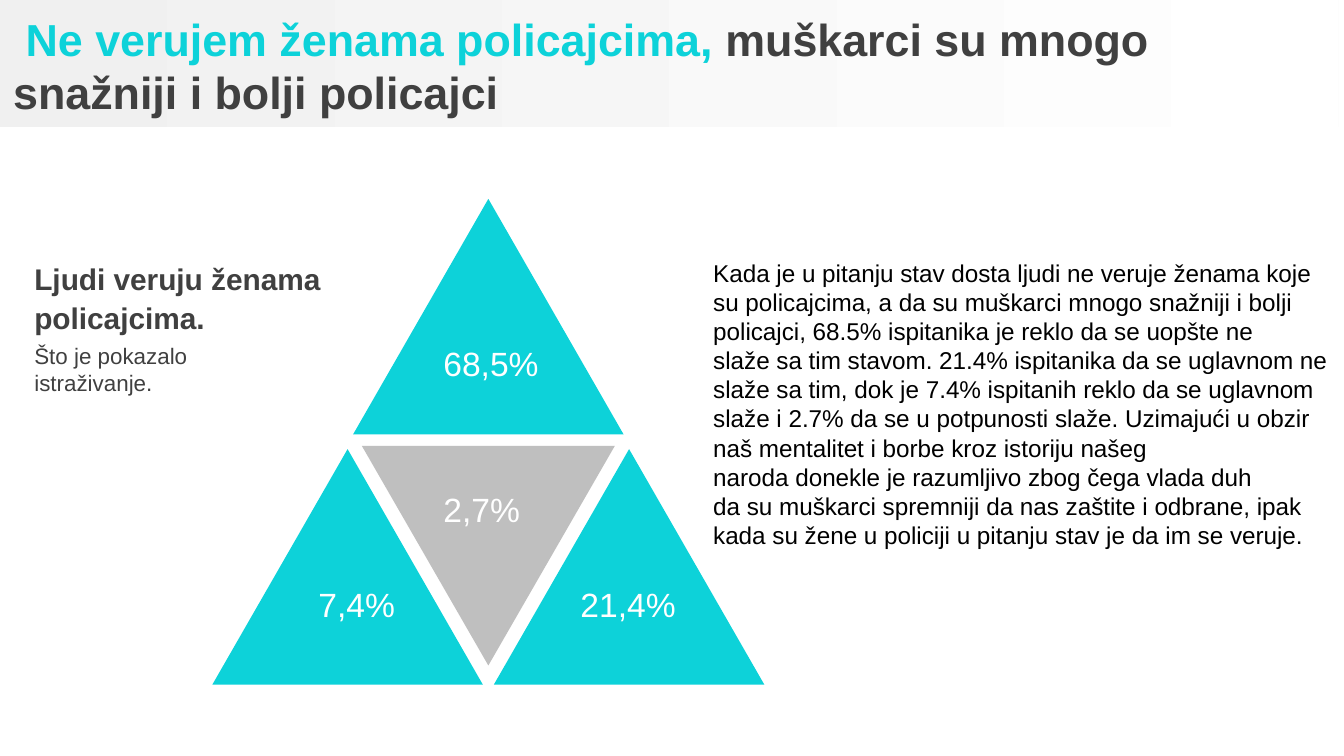
import pptx
import pptx.dml.color
import pptx.enum.shapes
import pptx.enum.text
import pptx.util

SHAPE = pptx.enum.shapes.MSO_SHAPE
ANCHOR = pptx.enum.text.MSO_ANCHOR
TURQUOISE, DARK, GRAY, BLACK, WHITE = "0DD2D9", "404040", "BFBFBF", "000000", "FFFFFF"
BODY = [
    "Kada je u pitanju stav dosta ljudi ne veruje ženama koje su policajcima, "
    "a da su muškarci mnogo snažniji i bolji",
    "policajci, 68.5% ispitanika je reklo da se uopšte ne",
    "slaže sa tim stavom. 21.4% ispitanika da se uglavnom ne slaže sa tim, "
    "dok je 7.4% ispitanih reklo da se uglavnom slaže i 2.7% da se u potpunosti "
    "slaže. Uzimajući u obzir naš mentalitet i borbe kroz istoriju našeg",
    "naroda donekle je razumljivo zbog čega vlada duh",
    "da su muškarci spremniji da nas zaštite i odbrane, ipak",
    "kada su žene u policiji u pitanju stav je da im se veruje.",
]


def color(hex_string):
    return pptx.dml.color.RGBColor.from_string(hex_string)


def add_run(paragraph, text, size=18, fill=WHITE, bold=False):
    run = paragraph.add_run()
    run.text = text
    run.font.name = "Arial"
    run.font.size = pptx.util.Pt(size)
    run.font.bold = bold
    run.font.color.rgb = color(fill)


class Deck:
    """Holds the presentation, the current slide and its element styles."""

    def __init__(self, width, height):
        self.presentation = pptx.Presentation()
        self.presentation.slide_width = pptx.util.Cm(width)
        self.presentation.slide_height = pptx.util.Cm(height)
        self.slide = self.presentation.slides.add_slide(self.presentation.slide_layouts[6])

    def shape(self, kind, *box):
        shape = self.slide.shapes.add_shape(kind, *map(pptx.util.Cm, box))
        shape.shadow.inherit = False
        shape.line.fill.background()
        return shape

    def band(self, start, end, *box):
        """Draw a rectangle with a left-to-right gradient."""
        fill = self.shape(SHAPE.RECTANGLE, *box).fill
        fill.gradient()
        fill.gradient_angle = 0
        for stop, position, stop_color in zip(fill.gradient_stops, (0, 1), (start, end)):
            stop.position = position
            stop.color.rgb = color(stop_color)

    def triangle(self, kind, fill, *box):
        shape = self.shape(kind, *box)
        shape.fill.solid()
        shape.fill.fore_color.rgb = color(fill)

    def text(self, paragraphs, *box, anchor=ANCHOR.TOP, spacing=None, **style):
        """Add a text box; each paragraph is a string or a list of (text, colour)."""
        frame = self.slide.shapes.add_textbox(*map(pptx.util.Cm, box)).text_frame
        frame.word_wrap = True
        frame.vertical_anchor = anchor
        for index, content in enumerate(paragraphs):
            paragraph = frame.add_paragraph() if index else frame.paragraphs[0]
            paragraph.line_spacing = spacing
            if isinstance(content, str):
                add_run(paragraph, content, **style)
            else:
                for text, fill in content:
                    add_run(paragraph, text, fill=fill, **style)


def main():
    deck = Deck(25.4, 14.29)
    deck.band("F0F0F0", WHITE, 0, 0, 25.3, 2.4)
    title = [(" Ne verujem ženama policajcima, ", TURQUOISE),
             ("muškarci su mnogo snažniji i bolji policajci", DARK)]
    deck.text([title], 0, 0.08, 23.62, 2.3, anchor=ANCHOR.MIDDLE, size=24, bold=True)

    width, height, center = 5.11, 4.45, 9.23
    half_step = 2.66
    for offset, top in ((0, 3.76), (-half_step, 8.49), (half_step, 8.49)):
        deck.triangle(SHAPE.FLOWCHART_EXTRACT, TURQUOISE,
                      center + offset - width / 2, top, width, height)
    deck.triangle(SHAPE.FLOWCHART_MERGE, GRAY, center - 2.39, 8.43, 4.78, 4.15)

    deck.text(["Ljudi veruju ženama policajcima."], 0.4, 4.57, 6.38, 2.06,
              anchor=ANCHOR.MIDDLE, spacing=1.1, size=16, fill=DARK, bold=True)
    deck.text(["Što je pokazalo istraživanje."], 0.4, 6.35, 4.93, 1.27, size=12, fill=DARK)
    deck.text(BODY, 13.23, 4.75, 12.17, 6.38, size=13, fill=BLACK)

    for label, left, top, label_width in (("68,5%", 8.13, 6.35, 2.6),
                                          ("21,4%", 10.72, 10.92, 2.6),
                                          ("7,4%", 5.77, 10.92, 3.18),
                                          ("2,7%", 8.13, 9.12, 2.4)):
        deck.text([label], left, top, label_width, 1.02)

    deck.presentation.save("out.pptx")


if __name__ == "__main__":
    main()
